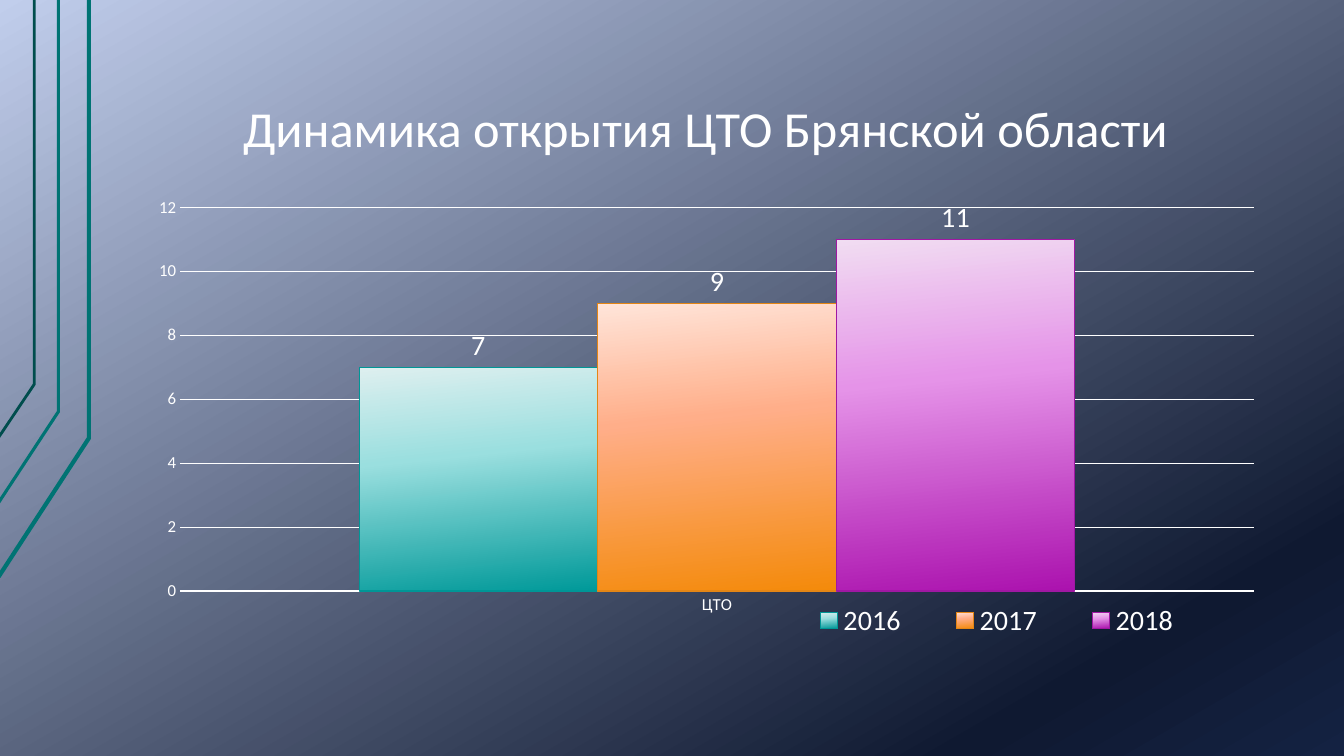
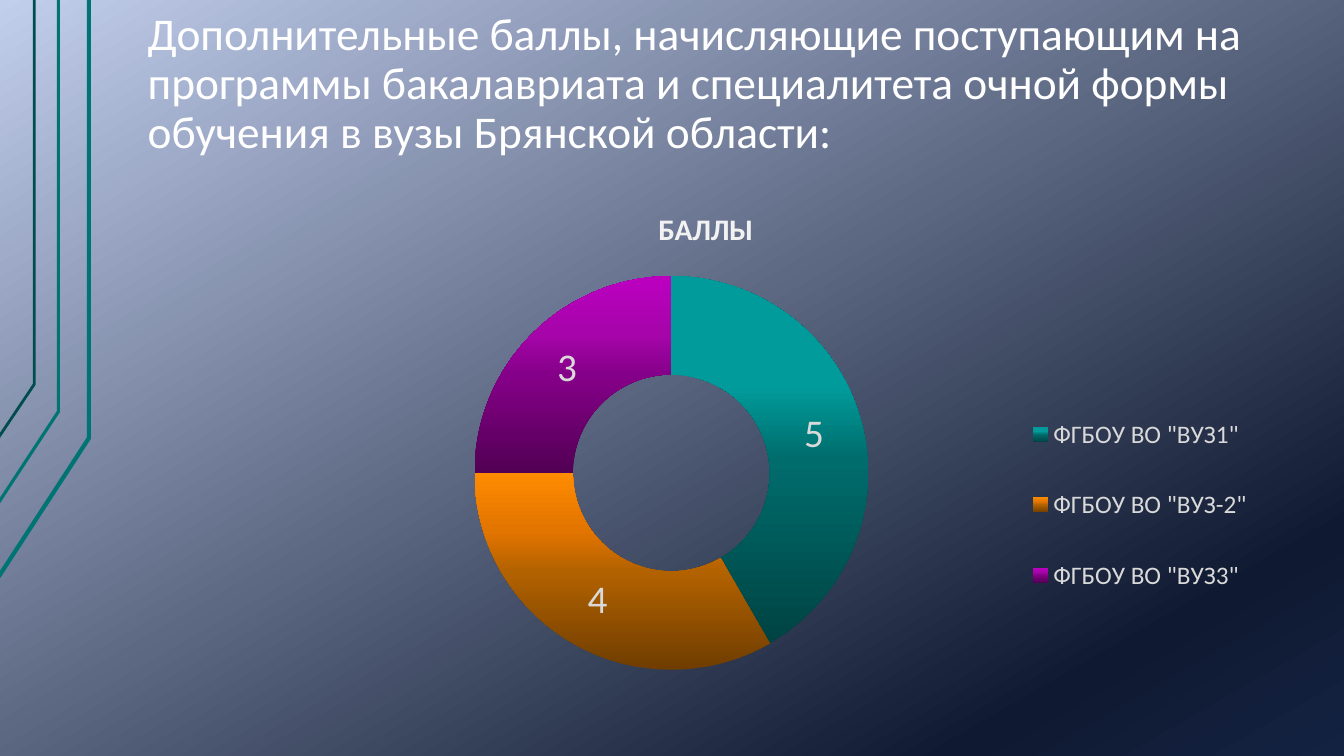
import pptx
import pptx.chart.data
import pptx.dml.color
import pptx.enum.chart
import pptx.enum.text
import pptx.oxml
import pptx.oxml.ns
import pptx.util

Pt = pptx.util.Pt
FONT = "Calibri"
WHITE = "FFFFFF"

# Shared look: background, corner lines (points, colour, width), title and chart boxes
BACKGROUND = [(0, "C1CEEC"), (85, "0F1931"), (100, "142242")]
CORNER_LINES = [
    ([(-1, 412), (63.5, 313), (63.5, 0)], "007373", 3),
    ([(-1, 359), (41.75, 294), (41.75, 0)], "007373", 2.25),
    ([(-1, 312.5), (24.5, 274.5), (24.5, 0)], "004D4D", 2),
]
TITLE_BOX = (96, 21.5, 816, 96.5)
CHART_BOX = (96, 134, 816, 351.5)

# Slide content
COLUMNS = {
    "title": "Динамика открытия ЦТО Брянской области",
    "size": 36,
    "align": "CENTER",
    "type": "COLUMN_CLUSTERED",
    "categories": ["ЦТО"],
    "series": [("2016", [7]), ("2017", [9]), ("2018", [11])],
    "plot": (0.04, 0.04, 0.94, 0.78),
    "legend": (0.56, 0.84, 0.39, 0.08),
    "legend_font": (20, WHITE),
    "label_font": (20, WHITE),
    "angle": 84,
    "fills": [
        [(0, "DEEFEF"), (40, "9ADFDF"), (100, "009999")],
        [(0, "FFE5DA"), (40, "FFAE89"), (100, "F48A0A")],
        [(0, "F1DDF2"), (40, "E593E8"), (100, "AB12AE")],
    ],
    "outlines": ["009696", "E48615", "A018A3"],
}
DOUGHNUT = {
    "title": "Дополнительные баллы, начисляющие поступающим на программы "
             "бакалавриата и специалитета очной формы обучения в вузы "
             "Брянской области:",
    "size": 32.4,
    "align": "LEFT",
    "type": "DOUGHNUT",
    "categories": ['ФГБОУ ВО "ВУЗ1"', 'ФГБОУ ВО "ВУЗ-2"', 'ФГБОУ ВО "ВУЗ3"'],
    "series": [("БАЛЛЫ", [5, 4, 3])],
    "plot": (0.29, 0.18, 0.36, 0.8),
    "legend": (0.77, 0.39, 0.22, 0.51),
    "legend_font": (18, "D9D9D9"),
    "label_font": (28, "D9D9D9"),
    "angle": 270,
    "fills": [
        [(0, "004343"), (50, "006C6C"), (70, "019B9B"), (100, "009999")],
        [(0, "6F3D00"), (50, "B36200"), (70, "E27400"), (100, "FE8B00")],
        [(0, "520054"), (50, "850088"), (70, "A505A9"), (100, "BC00C0")],
    ],
}


def rgb(color):
    return pptx.dml.color.RGBColor.from_string(color)


def set_font(font, size, color, bold=False):
    font.name = FONT
    font.size = Pt(size)
    font.bold = bold
    font.color.rgb = rgb(color)


def set_gradient(fill, owner, stops, angle):
    """Fill with any number of stops; the newest gradient is the last in owner."""
    fill.gradient()
    grad = owner.xpath(".//a:gradFill")[-1]
    for child in list(grad):
        grad.remove(child)
    stop_xml = "".join(
        f'<a:gs pos="{pos * 1000}"><a:srgbClr val="{color}"/></a:gs>'
        for pos, color in stops)
    ns = pptx.oxml.ns.nsdecls("a")
    grad.append(pptx.oxml.parse_xml(f"<a:gsLst {ns}>{stop_xml}</a:gsLst>"))
    grad.append(pptx.oxml.parse_xml(
        f'<a:lin {ns} ang="{angle * 60000}" scaled="0"/>'))


def set_layout(parent, index, box, inner=False):
    """Place the plot area or legend by fractions of the chart."""
    for old in parent.xpath("./c:layout"):
        parent.remove(old)
    target = '<c:layoutTarget val="inner"/>' if inner else ""
    modes = "".join(f'<c:{k}Mode val="edge"/>' for k in "xy")
    sizes = "".join(f'<c:{k} val="{v}"/>' for k, v in zip("xywh", box))
    ns = pptx.oxml.ns.nsdecls("c")
    parent.insert(index, pptx.oxml.parse_xml(
        f"<c:layout {ns}><c:manualLayout>{target}{modes}{sizes}"
        "</c:manualLayout></c:layout>"))


def style_master(prs, s):
    """Put background and corner lines on the master."""
    master = prs.slide_master
    set_gradient(master.background.fill, master.element, BACKGROUND, 60)
    for i, (points, color, width) in enumerate(CORNER_LINES):
        start, *rest = [(Pt(x), Pt(y)) for x, y in points]
        builder = s.shapes.build_freeform(*start)
        builder.add_line_segments(rest, close=False)
        sp = builder.convert_to_shape()
        sp.shadow.inherit = False
        sp.fill.background()
        sp.line.color.rgb = rgb(color)
        sp.line.width = Pt(width)
        master.shapes.element.insert(2 + i, sp.element)


def add_title(s, data):
    sp = s.shapes.title
    sp.left, sp.top, sp.width, sp.height = map(Pt, TITLE_BOX)
    tf = sp.text_frame
    tf.text = data["title"]
    tf.word_wrap = True
    tf.auto_size = pptx.enum.text.MSO_AUTO_SIZE.NONE
    tf.vertical_anchor = pptx.enum.text.MSO_ANCHOR.BOTTOM
    tf.margin_left = tf.margin_right = Pt(9.5)
    tf.margin_top = tf.margin_bottom = Pt(5)
    p = tf.paragraphs[0]
    p.alignment = pptx.enum.text.PP_ALIGN[data["align"]]
    p.line_spacing = 0.9
    set_font(p.font, data["size"], WHITE)


def add_chart(s, data):
    chart_data = pptx.chart.data.CategoryChartData()
    chart_data.categories = data["categories"]
    for name, values in data["series"]:
        chart_data.add_series(name, values)
    chart = s.shapes.add_chart(
        pptx.enum.chart.XL_CHART_TYPE[data["type"]],
        *map(Pt, CHART_BOX), chart_data).chart
    set_font(chart.font, 10, WHITE)
    chart.has_title = False

    # Legend and plot area
    chart.has_legend = True
    chart.legend.position = pptx.enum.chart.XL_LEGEND_POSITION.BOTTOM
    chart.legend.include_in_layout = False
    set_font(chart.legend.font, *data["legend_font"])
    set_layout(chart.element.xpath(".//c:legend")[0], 1, data["legend"])
    set_layout(chart.element.xpath(".//c:plotArea")[0], 0, data["plot"], True)

    # Value labels
    plot = chart.plots[0]
    plot.has_data_labels = True
    labels = plot.data_labels
    labels.show_value = True
    labels.show_percentage = False
    set_font(labels.font, *data["label_font"])
    return chart


def style_columns(chart, data):
    plot = chart.plots[0]
    plot.gap_width = 150
    plot.overlap = 0
    plot.vary_by_categories = False
    plot.data_labels.position = pptx.enum.chart.XL_LABEL_POSITION.OUTSIDE_END
    for series, stops, outline in zip(plot.series, data["fills"], data["outlines"]):
        set_gradient(series.format.fill, chart.element, stops, data["angle"])
        series.format.line.color.rgb = rgb(outline)
        series.format.line.width = Pt(0.75)
    for axis in (chart.category_axis, chart.value_axis):
        axis.major_tick_mark = pptx.enum.chart.XL_TICK_MARK.NONE
        axis.format.line.fill.background()
        set_font(axis.tick_labels.font, 12, WHITE)
    axis = chart.value_axis
    axis.minimum_scale, axis.maximum_scale, axis.major_unit = 0, 12, 2
    axis.has_major_gridlines = True
    axis.major_gridlines.format.line.color.rgb = rgb(WHITE)
    axis.major_gridlines.format.line.width = Pt(0.75)


def style_doughnut(chart, data):
    chart.has_title = True
    tf = chart.chart_title.text_frame
    tf.text = data["series"][0][0]
    set_font(tf.paragraphs[0].font, 21.3, "F2F2F2", bold=True)
    chart.chart_title.include_in_layout = False
    chart.element.xpath(".//c:holeSize")[0].set("val", "75")
    series = chart.plots[0].series[0]
    for i, stops in enumerate(data["fills"]):
        point = series.points[i].format
        set_gradient(point.fill, chart.element, stops, data["angle"])
        point.line.fill.background()


def main():
    prs = pptx.Presentation()
    prs.slide_width, prs.slide_height = Pt(960), Pt(540)
    title_only = prs.slide_layouts[5]
    for data, style in ((COLUMNS, style_columns), (DOUGHNUT, style_doughnut)):
        s = prs.slides.add_slide(title_only)
        add_title(s, data)
        style(add_chart(s, data), data)
    style_master(prs, s)
    prs.save("out.pptx")


if __name__ == "__main__":
    main()
